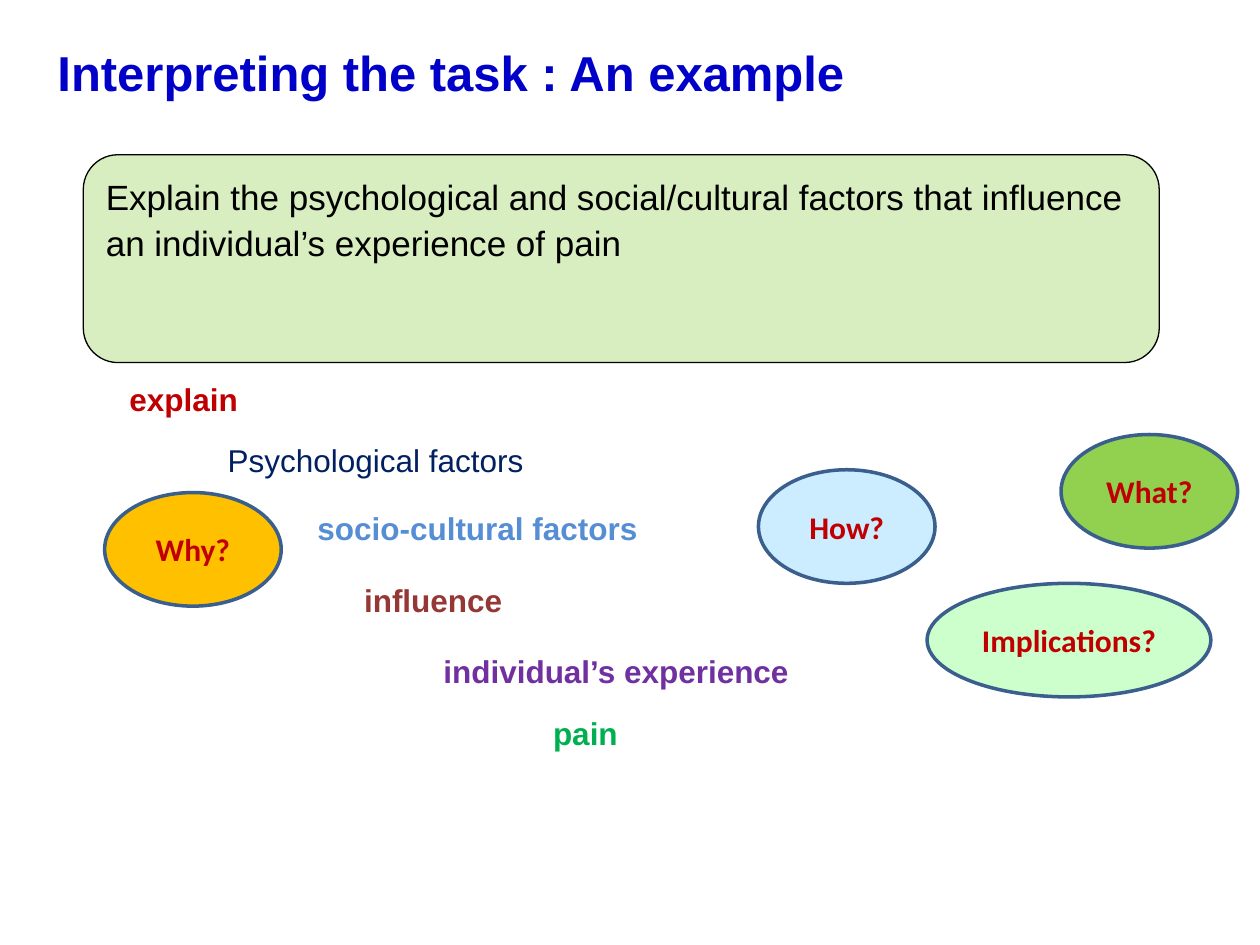
from pptx import Presentation
from pptx import util as u
from pptx.dml.color import RGBColor
from pptx.enum import shapes, text

BLACK = RGBColor(0x00, 0x00, 0x00)
TITLE_BLUE = RGBColor(0x00, 0x00, 0xC8)
PALE_GREEN = RGBColor(0xD8, 0xEE, 0xC0)
RED = RGBColor(0xC0, 0x00, 0x00)
NAVY = RGBColor(0x00, 0x20, 0x60)
SKY = RGBColor(0x55, 0x8E, 0xD5)
BROWN = RGBColor(0x95, 0x37, 0x35)
PURPLE = RGBColor(0x70, 0x30, 0xA0)
GREEN = RGBColor(0x00, 0xB0, 0x50)
LIME = RGBColor(0x92, 0xD0, 0x50)
AMBER = RGBColor(0xFF, 0xC0, 0x00)
ICE = RGBColor(0xCC, 0xEC, 0xFF)
MINT = RGBColor(0xCC, 0xFF, 0xCC)
OUTLINE = RGBColor(0x3A, 0x5F, 0x8C)

TITLE = "Interpreting the task : An example"
TASK = ("Explain the psychological and social/cultural factors that influence "
        "an individual’s experience of pain")

# wording, left, top, width (cm), colour
KEY_TERMS = [
    ("explain", 2.36, 7.47, 8.53, RED),
    ("socio-cultural factors", 6.15, 10.06, 7.98, SKY),
    ("influence", 7.09, 11.51, 6.81, BROWN),
    ("individual’s experience", 8.69, 12.95, 7.87, PURPLE),
    ("pain", 10.9, 14.2, 6.81, GREEN),
]
PLAIN_TERM = ("Psychological factors", 4.34, 8.76, 8, NAVY)
TERM_HEIGHT = 1.09

QUESTIONS = [
    ("What?", 21.39, 8.76, 3.56, LIME),
    ("Why?", 2.11, 9.93, 3.56, AMBER),
    ("How?", 15.29, 9.47, 3.56, ICE),
    ("Implications?", 18.69, 11.76, 5.72, MINT),
]
QUESTION_HEIGHT = 2.29


def write(shape, wording, size, colour, bold=True, font="Arial",
          align=text.PP_ALIGN.LEFT, anchor=text.MSO_ANCHOR.TOP, spacing=1.0):
    frame = shape.text_frame
    frame.word_wrap = True
    frame.vertical_anchor = anchor
    paragraph = frame.paragraphs[0]
    paragraph.alignment = align
    paragraph.line_spacing = spacing
    run = paragraph.add_run()
    run.text = wording
    run.font.name = font
    run.font.size = u.Pt(size)
    run.font.bold = bold
    run.font.color.rgb = colour


def add_text_box(slide, left, top, width, height):
    return slide.shapes.add_textbox(*map(u.Cm, (left, top, width, height)))


def add_outlined(slide, kind, place, fill, line, line_width):
    shape = slide.shapes.add_shape(kind, *map(u.Cm, place))
    shape.shadow.inherit = False
    shape.fill.solid()
    shape.fill.fore_color.rgb = fill
    shape.line.color.rgb = line
    shape.line.width = u.Pt(line_width)
    return shape


def main():
    deck = Presentation()
    deck.slide_width, deck.slide_height = u.Cm(25.4), u.Cm(19.05)
    slide = deck.slides.add_slide(deck.slide_layouts[6])

    write(add_text_box(slide, 0.91, 0.74, 23.9, 1.85), TITLE, 28, TITLE_BLUE)

    task_panel = add_outlined(slide, shapes.MSO_SHAPE.ROUNDED_RECTANGLE,
                              (1.68, 3.12, 21.69, 4.19), PALE_GREEN, BLACK, 0.75)
    write(task_panel, TASK, 20, BLACK, bold=False, spacing=1.1)

    for term, left, top, width, colour in KEY_TERMS:
        write(add_text_box(slide, left, top, width, TERM_HEIGHT), term, 18, colour,
              align=text.PP_ALIGN.JUSTIFY, spacing=1.1)

    for question, left, top, width, fill in QUESTIONS:
        bubble = add_outlined(slide, shapes.MSO_SHAPE.OVAL,
                              (left, top, width, QUESTION_HEIGHT), fill, OUTLINE, 2)
        write(bubble, question, 18, RED, font="Calibri",
              align=text.PP_ALIGN.CENTER, anchor=text.MSO_ANCHOR.MIDDLE)

    term, left, top, width, colour = PLAIN_TERM
    write(add_text_box(slide, left, top, width, TERM_HEIGHT), term, 18, colour, bold=False)

    deck.save("out.pptx")


if __name__ == "__main__":
    main()
